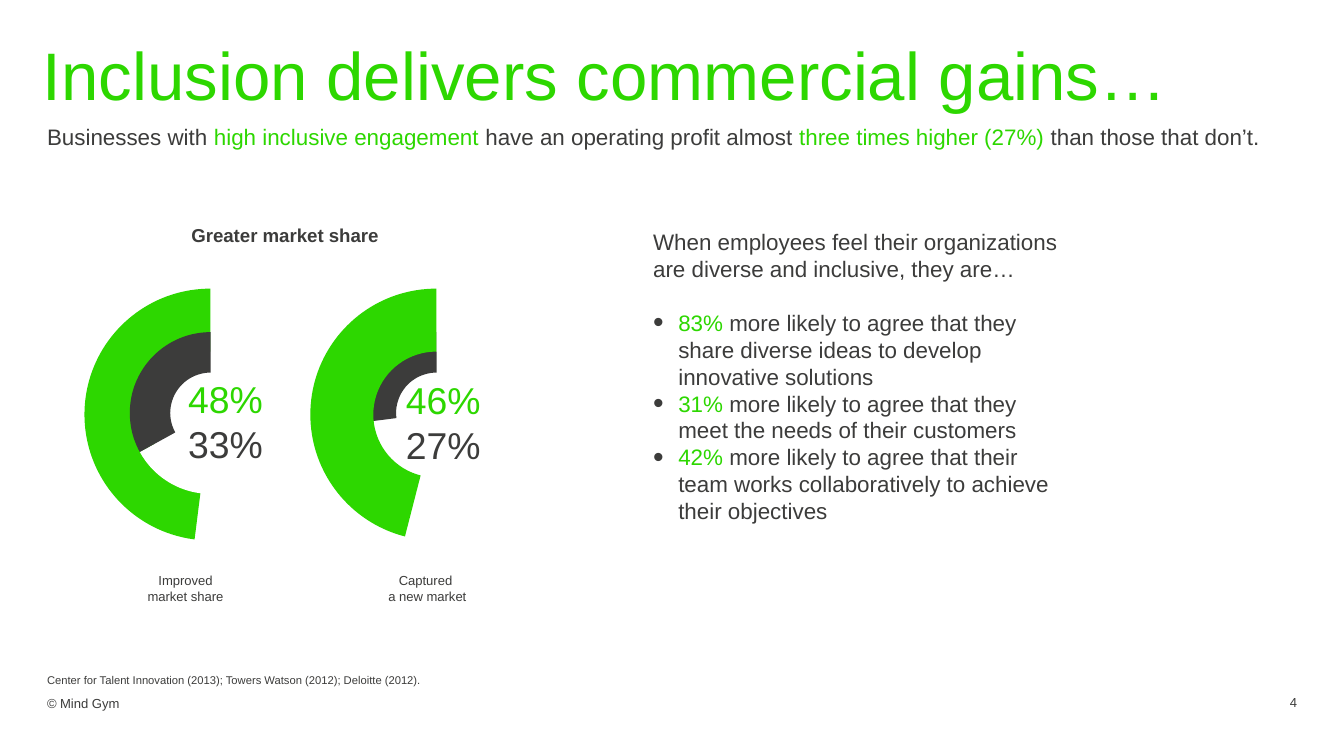
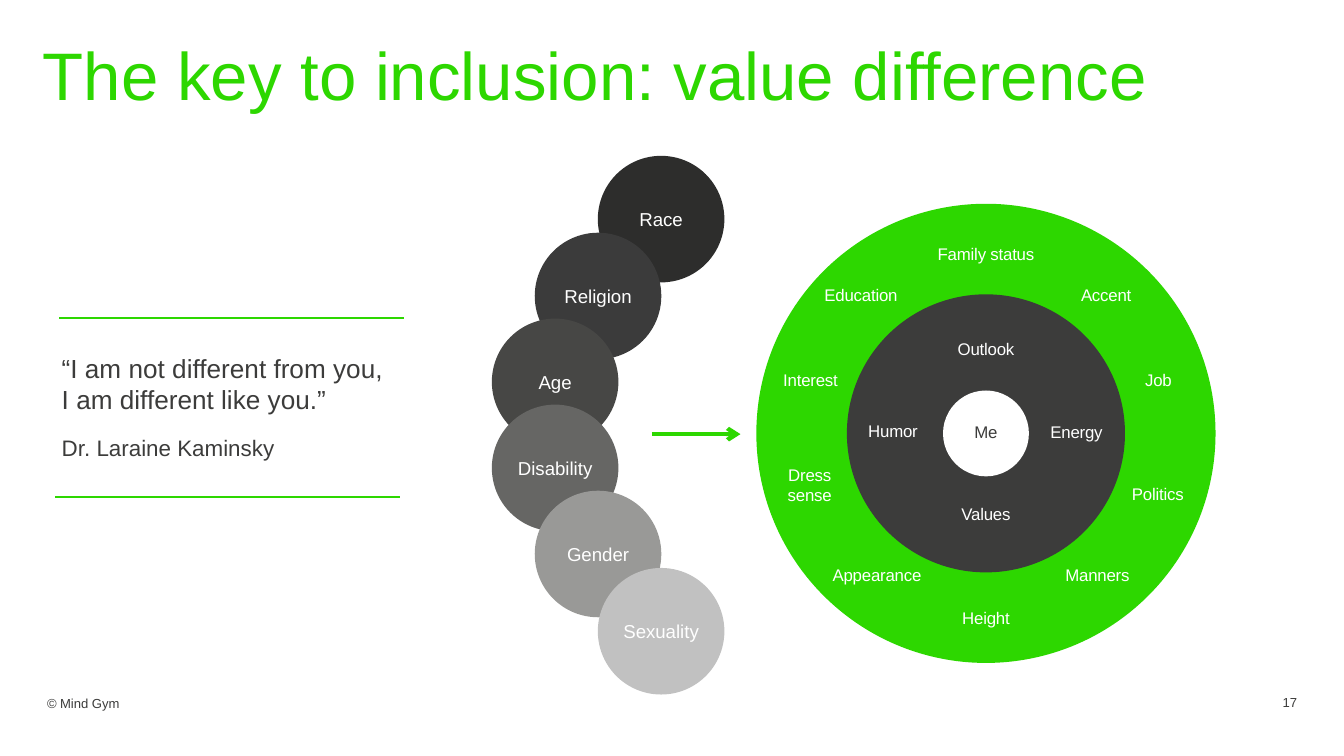
from lxml import etree
from pptx import Presentation
from pptx.chart.data import CategoryChartData
from pptx.dml.color import RGBColor
from pptx.enum.chart import XL_CHART_TYPE
from pptx.enum.shapes import MSO_CONNECTOR, MSO_SHAPE
from pptx.enum.text import MSO_ANCHOR, PP_ALIGN
from pptx.oxml import parse_xml
from pptx.oxml.ns import nsdecls, qn
from pptx.util import Pt

FONT = "Arial"
COLORS = {
    "green": "2DD700",
    "dark": "3C3C3B",
    "deep": "323231",
    "white": "FFFFFF",
}
IDENTITY_GREYS = ["2D2D2C", "3B3B3B", "474745", "666664", "999997", "C1C1C1"]
BULLET_INDENT = 13.5


def rgb(color):
    return RGBColor.from_string(COLORS.get(color, color))


def add_bullet(p):
    pPr = p._p.get_or_add_pPr()
    pPr.set("marL", str(Pt(BULLET_INDENT)))
    pPr.set("indent", str(-Pt(BULLET_INDENT)))
    color = etree.SubElement(pPr, qn("a:buClr"))
    etree.SubElement(color, qn("a:srgbClr"), val=COLORS["dark"])
    etree.SubElement(pPr, qn("a:buSzPct"), val="135000")
    etree.SubElement(pPr, qn("a:buFont"), typeface=FONT)
    etree.SubElement(pPr, qn("a:buChar"), char="•")


def write(p, text, size=12, color="dark", bold=False, align=PP_ALIGN.LEFT, leading=None,
          before=0, after=0, tracking=0, bullet=False):
    """Fill a paragraph from a string or from (text, colour) pairs; leading defaults to 1.2 x size."""
    p.alignment = align
    p.line_spacing = leading or Pt(size * 1.2)
    p.space_before, p.space_after = Pt(before), Pt(after)
    if bullet:
        add_bullet(p)
    runs = [(text, color)] if isinstance(text, str) else text
    for run_text, run_color in runs:
        for i, line in enumerate(run_text.split("\n")):
            if i:
                p.add_line_break()
            r = p.add_run()
            r.text = line
            r.font.name, r.font.size, r.font.bold = FONT, Pt(size), bold
            r.font.color.rgb = rgb(run_color)
            if tracking:
                r._r.get_or_add_rPr().set("spc", str(round(tracking * 100)))


def fill_frame(tf, paragraphs, margins=(0, 0, 0, 0), **fmt):
    """Each paragraph is its text, or a (text, format overrides) pair."""
    tf.word_wrap = True
    tf.margin_left, tf.margin_top, tf.margin_right, tf.margin_bottom = map(Pt, margins)
    for i, item in enumerate(paragraphs):
        text, own = item if isinstance(item, tuple) else (item, {})
        p = tf.add_paragraph() if i else tf.paragraphs[0]
        write(p, text, **{**fmt, **own})


def add_text(slide, box, *paragraphs, **fmt):
    sp = slide.shapes.add_textbox(*map(Pt, box))
    fill_frame(sp.text_frame, paragraphs, **fmt)


def add_circle(slide, cx, cy, radius, fill, label=None):
    box = (cx - radius, cy - radius, 2 * radius, 2 * radius)
    sp = slide.shapes.add_shape(MSO_SHAPE.OVAL, *map(Pt, box))
    sp.shadow.inherit = False
    sp.fill.solid()
    sp.fill.fore_color.rgb = rgb(fill)
    sp.line.fill.background()
    if label:
        sp.text_frame.vertical_anchor = MSO_ANCHOR.MIDDLE
        fill_frame(sp.text_frame, [label], size=10, color="white", align=PP_ALIGN.CENTER)


def add_line(slide, x1, x2, y, width, arrow=False):
    line = slide.shapes.add_connector(MSO_CONNECTOR.STRAIGHT, Pt(x1), Pt(y), Pt(x2), Pt(y))
    line.line.color.rgb = rgb("green")
    line.line.width = Pt(width)
    spPr = line._element.spPr
    if arrow:
        etree.SubElement(spPr.find(qn("a:ln")), qn("a:tailEnd"), type="arrow")
    etree.SubElement(spPr, qn("a:effectLst"))


def set_plot_layout(chart, x, y, w, h):
    plot_area = chart._chartSpace.chart.plotArea
    for old in plot_area.findall(qn("c:layout")):
        plot_area.remove(old)
    plot_area.insert(0, parse_xml(
        f'<c:layout {nsdecls("c")}><c:manualLayout><c:layoutTarget val="inner"/>'
        f'<c:xMode val="edge"/><c:yMode val="edge"/><c:x val="{x}"/><c:y val="{y}"/>'
        f'<c:w val="{w}"/><c:h val="{h}"/></c:manualLayout></c:layout>'))


def add_doughnut(slide, box, percent, color, layout=None):
    """Show percent as a coloured arc that ends at twelve o'clock."""
    data = CategoryChartData()
    data.categories = ["1", "2", "3", "4"]
    data.add_series("Series 1", (100 - percent, percent, 0, 0))
    chart = slide.shapes.add_chart(XL_CHART_TYPE.DOUGHNUT, *map(Pt, box), data).chart
    chart.has_legend = chart.has_title = False
    chart.font.name, chart.font.size = FONT, Pt(18)
    chart.font.color.rgb = rgb("dark")
    plot = chart.plots[0]
    plot.vary_by_categories = True
    for i, point_color in enumerate(["white", color, "white", "deep"]):
        fmt = plot.series[0].points[i].format
        fmt.fill.solid()
        fmt.fill.fore_color.rgb = rgb(point_color)
        fmt.line.fill.background()
    space = chart._chartSpace
    next(space.iter(qn("c:holeSize"))).set("val", "70")
    space.find(qn("c:txPr")).addprevious(parse_xml(
        f'<c:spPr {nsdecls("c", "a")}><a:noFill/><a:ln><a:noFill/></a:ln></c:spPr>'))
    if layout:
        set_plot_layout(chart, *layout)


def add_outer_ring(slide, left, percent):
    add_doughnut(slide, (left, 144.7, 225.4, 154.8), percent, "green")


def add_inner_ring(slide, left, percent):
    add_doughnut(slide, (left, 164.9, 173.5, 118.8), percent, "dark", (0.21, 0.11, 0.5, 0.73))


def add_base_slide(prs, title, number):
    slide = prs.slides.add_slide(prs.slide_layouts[6])
    add_text(slide, (23, 25.2, 697, 41), title, size=36, color="green", leading=Pt(36))
    add_text(slide, (25.2, 372.2, 228, 13.7), "© Mind Gym", size=7, leading=Pt(9))
    add_text(slide, (674.6, 372.2, 20.2, 8.6), number, size=7, align=PP_ALIGN.RIGHT)
    return slide


def build_gains(prs):
    slide = add_base_slide(prs, "Inclusion delivers commercial gains…", "4")
    add_text(slide, (25.2, 65.5, 694.8, 20.2),
             [("Businesses with ", "dark"), ("high inclusive engagement", "green"),
              (" have an operating profit almost ", "dark"),
              ("three times higher (27%) ", "green"), ("than those that don’t.", "dark")],
             leading=Pt(15))
    add_text(slide, (58.3, 120.2, 188.6, 20.2), "Greater market share",
             size=10, bold=True, align=PP_ALIGN.CENTER)

    add_inner_ring(slide, 154.1, 27)
    add_outer_ring(slide, 0, 48)
    add_inner_ring(slide, 33.1, 33)
    add_outer_ring(slide, 121, 46)
    for left, top, outer, inner in [(100.8, 201.6, "48%", "33%"), (217.4, 202.3, "46%", "27%")]:
        add_text(slide, (left, top, 49.7, 64.8), (outer, {"color": "green"}), inner,
                 size=20, margins=(0, 0, 0, 3))
    for left, width, caption in [(70.6, 57.6, "Improved\nmarket share"),
                                 (195.1, 67.7, "Captured \na new market")]:
        add_text(slide, (left, 303.1, width, 24.5), caption, size=7,
                 align=PP_ALIGN.CENTER, margins=(7.2, 3.6, 7.2, 3.6))

    findings = [
        ("83% ", "more likely to agree that they \nshare diverse ideas to develop \ninnovative solutions"),
        ("31% ", "more likely to agree that they \nmeet the needs of their customers"),
        ("42% ", "more likely to agree that their \nteam works collaboratively to achieve \ntheir objectives"),
    ]
    bullets = [([(share, "green"), (finding, "dark")],
                {"bullet": True, "before": 0 if i else 14.4})
               for i, (share, finding) in enumerate(findings)]
    add_text(slide, (349.9, 122.4, 257, 204.5),
             "When employees feel their organizations \nare diverse and inclusive, they are…", *bullets)
    add_text(slide, (20.2, 357.8, 534.2, 13),
             "Center for Talent Innovation (2013); Towers Watson (2012); Deloitte (2012).",
             size=6, margins=(5, 3, 5, 3))


def build_difference(prs):
    slide = add_base_slide(prs, "The key to inclusion: value difference", "17")
    center_x, center_y = 528.2, 232.2
    for radius, color in [(123, "green"), (74.5, "dark"), (23, "white")]:
        add_circle(slide, center_x, center_y, radius, color)

    # label, centre x, top, width
    ring_labels = [
        ("Outlook", center_x, 181.4, 41.8), ("Family status", center_x, 130.3, 57.6),
        ("Height", center_x, 325.4, 35.3), ("Interest", 434.2, 198, 33.1),
        ("Education", 461.2, 152.6, 43.9), ("Accent", 592.6, 152.6, 30.2),
        ("Job", 620.6, 198, 25.9), ("Appearance", 469.8, 302.4, 52.6),
        ("Manners", 587.9, 302.4, 38.2), ("Dress\nsense", 433.8, 249.1, 26.6),
        ("Politics", 620.3, 259.2, 31), ("Values", center_x, 270, 30.2),
        ("Energy", 576.7, 226.1, 31.7), ("Humor", 478.4, 225.4, 39.6),
        ("Me", center_x, 226.1, 14.4),
    ]
    for label, x, top, width in ring_labels:
        height = 12 * len(label.split("\n"))
        add_text(slide, (x - width / 2, top, width, height), label, size=9,
                 color="dark" if label == "Me" else "white",
                 align=PP_ALIGN.CENTER, tracking=-0.1)
    add_line(slide, 349.2, 396.7, 232.6, 2.25, arrow=True)

    add_text(slide, (33.1, 188.6, 204.5, 72),
             ("“I am not different from you, \nI am different like you.”", {"size": 14}),
             ("Dr. Laraine Kaminsky", {"leading": 1.5}), after=3)
    add_line(slide, 31.7, 216.7, 170.6, 1)
    add_line(slide, 29.5, 214.5, 266.4, 1)

    identities = ["Race", "Religion", "Age", "Disability", "Gender", "Sexuality"]
    arc_x = [354.2, 320.4, 297.4]
    arc_y = [117.4, 158.6, 204.6, 250.7, 296.8, 338.2]
    for label, x, y, grey in zip(identities, arc_x + arc_x[::-1], arc_y, IDENTITY_GREYS):
        add_circle(slide, x, y, 33.9, grey, label)


def main():
    prs = Presentation()
    prs.slide_width, prs.slide_height = Pt(720), Pt(405)
    build_gains(prs)
    build_difference(prs)
    prs.save("out.pptx")


if __name__ == "__main__":
    main()
